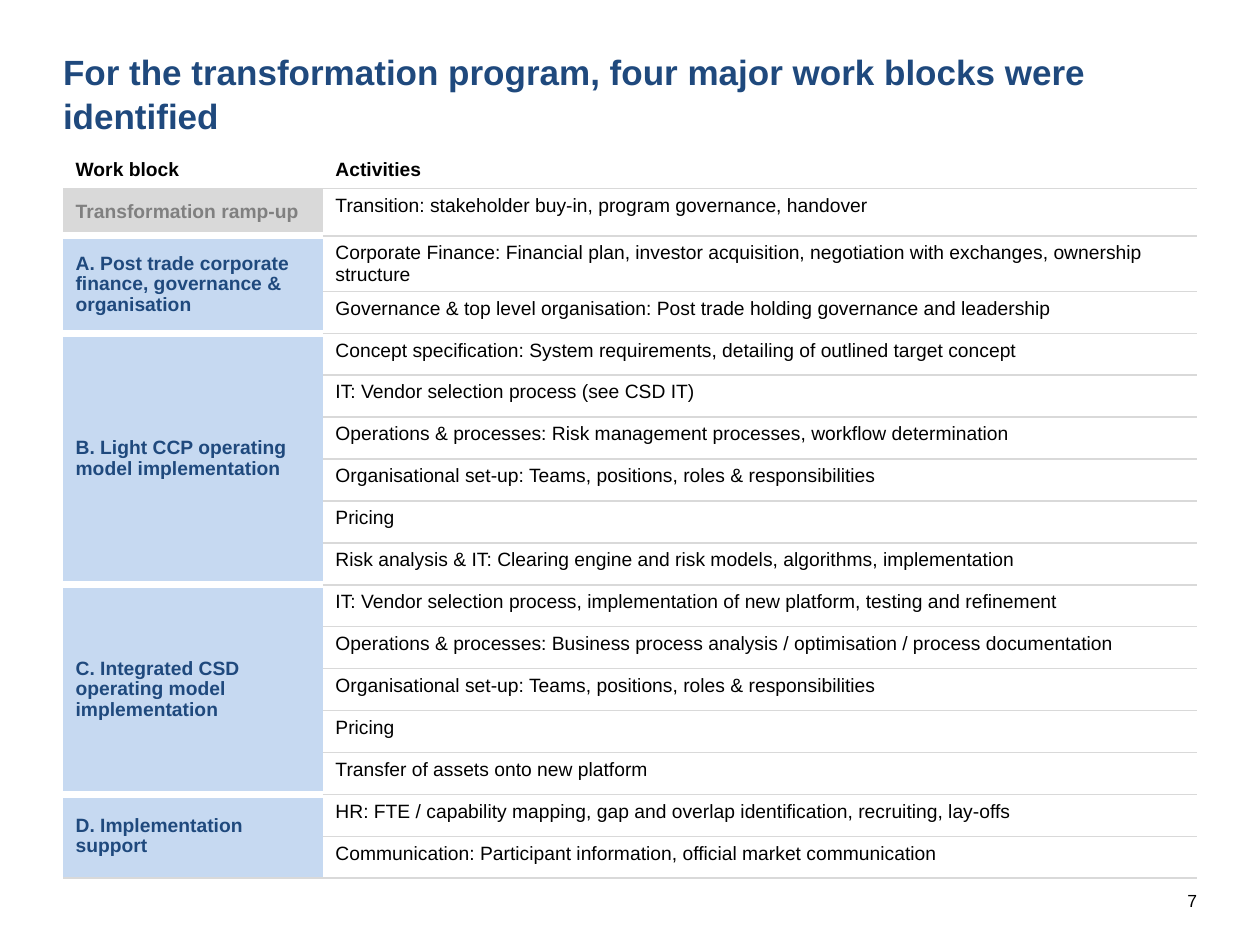
from dataclasses import dataclass

from lxml import etree
from pptx import Presentation
from pptx.dml.color import RGBColor
from pptx.enum import text
from pptx.oxml import ns
from pptx.util import Pt


@dataclass(frozen=True)
class Theme:
    font: str = "Arial"
    navy: str = "1F497D"
    black: str = "000000"
    muted: str = "808080"
    rule: str = "D9D9D9"
    block: str = "C6D9F1"
    white: str = "FFFFFF"
    title_size: float = 20
    table_size: float = 11
    number_size: float = 10


THEME = Theme()
LEFT, WIDTH = 36, 648
TABLE_TOP = 89.28
COLUMN_WIDTHS = (148.5, 499.5)
HEADER_HEIGHT, RAMP_UP_HEIGHT, TWO_LINE_HEIGHT, ROW_HEIGHT = 18.4, 27.1, 31.7, 23.96
THIN_RULE = (THEME.rule, 1)
WHITE_GAP = (THEME.white, 4.5)

TITLE = "For the transformation program, four major work blocks were identified"
HEADINGS = ("Work block", "Activities")
WORK_BLOCKS = [
    ("Transformation ramp-up", [
        "Transition: stakeholder buy-in, program governance, handover",
    ]),
    ("A. Post trade corporate finance, governance & organisation", [
        "Corporate Finance: Financial plan, investor acquisition, negotiation with "
        "exchanges, ownership structure",
        "Governance & top level organisation: Post trade holding governance and leadership",
    ]),
    ("B. Light CCP operating model implementation", [
        "Concept specification: System requirements, detailing of outlined target concept",
        "IT: Vendor selection process (see CSD IT)",
        "Operations & processes: Risk management processes, workflow determination",
        "Organisational set-up: Teams, positions, roles & responsibilities",
        "Pricing",
        "Risk analysis & IT: Clearing engine and risk models, algorithms, implementation",
    ]),
    ("C. Integrated CSD operating model implementation", [
        "IT: Vendor selection process, implementation of new platform, testing and refinement",
        "Operations & processes: Business process analysis / optimisation / process documentation",
        "Organisational set-up: Teams, positions, roles & responsibilities",
        "Pricing",
        "Transfer of assets onto new platform",
    ]),
    ("D. Implementation support", [
        "HR: FTE / capability mapping, gap and overlap identification, recruiting, lay-offs",
        "Communication: Participant information, official market communication",
    ]),
]


def write_text(frame, content, size=THEME.table_size, color=THEME.black, bold=False,
               align=text.PP_ALIGN.LEFT, spacing=1.0):
    paragraph = frame.paragraphs[0]
    paragraph.alignment = align
    paragraph.line_spacing = spacing
    run = paragraph.add_run()
    run.text = content
    run.font.name = THEME.font
    run.font.size = Pt(size)
    run.font.bold = bold
    run.font.color.rgb = RGBColor.from_string(color)


def clear_margins(frame):
    frame.margin_left = frame.margin_right = frame.margin_top = frame.margin_bottom = 0
    frame.vertical_anchor = text.MSO_ANCHOR.MIDDLE


def set_borders(cell, top=None, bottom=None):
    """Each border is a (colour, width) pair, or None for no line."""
    properties = cell._tc.get_or_add_tcPr()
    for tag, border in (("a:lnL", None), ("a:lnR", None), ("a:lnT", top), ("a:lnB", bottom)):
        line = etree.SubElement(properties, ns.qn(tag))
        if border is None:
            etree.SubElement(line, ns.qn("a:noFill"))
            continue
        color, width = border
        line.set("w", str(int(Pt(width))))
        fill = etree.SubElement(line, ns.qn("a:solidFill"))
        etree.SubElement(fill, ns.qn("a:srgbClr")).set("val", color)


def format_cell(cell, fill=None, top=None, bottom=None, padding=1.44,
                anchor=text.MSO_ANCHOR.TOP):
    set_borders(cell, top, bottom)
    if fill:
        cell.fill.solid()
        cell.fill.fore_color.rgb = RGBColor.from_string(fill)
    else:
        cell.fill.background()
    cell.margin_left = Pt(7.2)
    cell.margin_right = Pt(1.44)
    cell.margin_top = cell.margin_bottom = Pt(padding)
    cell.vertical_anchor = anchor


def add_title(slide):
    title = slide.shapes.title
    title.left, title.top, title.width, title.height = Pt(LEFT), Pt(21.6), Pt(WIDTH), Pt(62.64)
    clear_margins(title.text_frame)
    write_text(title.text_frame, TITLE, size=THEME.title_size, color=THEME.navy,
               bold=True, spacing=1.05)


def add_work_block(table, first, name, activities, is_ramp_up, is_last):
    last = first + len(activities) - 1
    for row in range(first, last + 1):
        format_cell(table.cell(row, 0), fill=THEME.rule if is_ramp_up else THEME.block,
                    top=THIN_RULE if is_ramp_up else WHITE_GAP,
                    bottom=THIN_RULE if is_last else WHITE_GAP,
                    anchor=text.MSO_ANCHOR.MIDDLE)
        activity = table.cell(row, 1)
        format_cell(activity, top=THIN_RULE, bottom=THIN_RULE, padding=3.6)
        write_text(activity.text_frame, activities[row - first])
    block = table.cell(first, 0)
    if last > first:
        block.merge(table.cell(last, 0))
    block.margin_right = Pt(7.2)
    write_text(block.text_frame, name, color=THEME.muted if is_ramp_up else THEME.navy,
               bold=True, spacing=0.95)


def add_work_table(slide):
    activity_count = sum(len(activities) for _, activities in WORK_BLOCKS)
    heights = [HEADER_HEIGHT, RAMP_UP_HEIGHT, TWO_LINE_HEIGHT]
    heights += [ROW_HEIGHT] * (activity_count + 1 - len(heights))
    table = slide.shapes.add_table(len(heights), len(COLUMN_WIDTHS), Pt(LEFT), Pt(TABLE_TOP),
                                   Pt(WIDTH), Pt(sum(heights))).table
    table.first_row = table.horz_banding = False
    for column, width in zip(table.columns, COLUMN_WIDTHS):
        column.width = Pt(width)
    for row, height in zip(table.rows, heights):
        row.height = Pt(height)

    # Header row
    for index, heading in enumerate(HEADINGS):
        cell = table.cell(0, index)
        format_cell(cell, bottom=THIN_RULE)
        write_text(cell.text_frame, heading, bold=True)

    # Work blocks with their activities
    first = 1
    for index, (name, activities) in enumerate(WORK_BLOCKS):
        add_work_block(table, first, name, activities, is_ramp_up=index == 0,
                       is_last=index == len(WORK_BLOCKS) - 1)
        first += len(activities)


def add_page_number(slide):
    box = slide.shapes.add_textbox(Pt(671.76), Pt(500.4), Pt(12.24), Pt(28.8))
    clear_margins(box.text_frame)
    box.text_frame.word_wrap = False
    write_text(box.text_frame, "7", size=THEME.number_size, align=text.PP_ALIGN.RIGHT)


def main():
    presentation = Presentation()
    presentation.slide_width, presentation.slide_height = Pt(720), Pt(540)
    slide = presentation.slides.add_slide(presentation.slide_layouts[5])
    add_title(slide)
    add_work_table(slide)
    add_page_number(slide)
    presentation.save("out.pptx")


if __name__ == "__main__":
    main()
